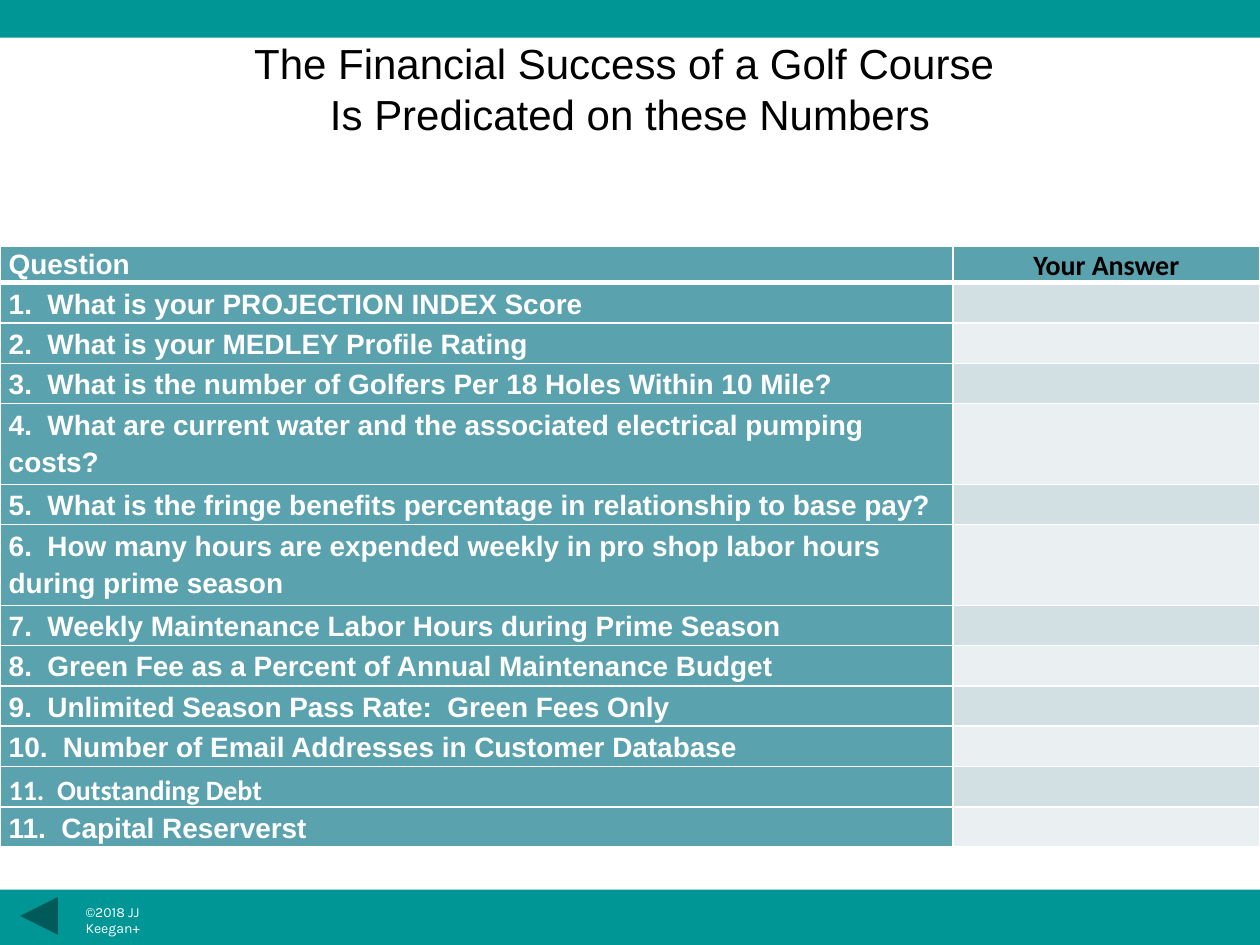
from dataclasses import dataclass

from lxml import etree
from pptx import Presentation
from pptx import util as u
from pptx.dml.color import RGBColor
from pptx.enum import shapes, text
from pptx.oxml import ns

Pt = u.Pt


@dataclass(frozen=True)
class Theme:
    teal: str = "009696"
    label_fill: str = "5AA2AE"
    bands: tuple = ("D2E0E3", "EAF0F2")
    white: str = "FFFFFF"
    black: str = "000000"
    font: str = "Arial"
    alt_font: str = "Calibri"
    footer_font: str = "Karla"
    title_size: int = 24
    table_size: int = 16
    footer_size: int = 8


THEME = Theme()
WIDTH, HEIGHT = 720, 540
HEADER_HEIGHT, LINE_HEIGHT = 20.5, 23
QUESTIONS = [
    "1.  What is your PROJECTION INDEX Score",
    "2.  What is your MEDLEY Profile Rating",
    "3.  What is the number of Golfers Per 18 Holes Within 10 Mile?",
    "4.  What are current water and the associated electrical pumping costs?",
    "5.  What is the fringe benefits percentage in relationship to base pay?",
    "6.  How many hours are expended weekly in pro shop labor hours during prime season",
    "7.  Weekly Maintenance Labor Hours during Prime Season",
    "8.  Green Fee as a Percent of Annual Maintenance Budget",
    "9.  Unlimited Season Pass Rate:  Green Fees Only",
    "10.  Number of Email Addresses in Customer Database",
    "11.  Outstanding Debt",
    "11.  Capital Reserverst",
]
TWO_LINE_ROWS = (4, 6)
ALT_FONT_ROW = 11


def add_block(slide, kind, left, top, width, height):
    """Add a borderless teal shape."""
    block = slide.shapes.add_shape(kind, Pt(left), Pt(top), Pt(width), Pt(height))
    block.shadow.inherit = False
    block.fill.solid()
    block.fill.fore_color.rgb = RGBColor.from_string(THEME.teal)
    block.line.fill.background()


def format_spans(para, font, size, color, bold=False):
    for span in para.runs:
        span.font.name = font
        span.font.size = Pt(size)
        span.font.bold = bold
        span.font.color.rgb = RGBColor.from_string(color)


def add_text(slide, left, top, width, height, content, font, size, color, align, wrap):
    box = slide.shapes.add_textbox(Pt(left), Pt(top), Pt(width), Pt(height))
    frame = box.text_frame
    frame.word_wrap = wrap
    frame.text = content
    for para in frame.paragraphs:
        para.alignment = align
        format_spans(para, font, size, color)


def set_borders(cell, header):
    properties = cell._tc.get_or_add_tcPr()
    for side in "LRTB":
        weight = 3 if header and side == "B" or not header and side == "T" and header is None else 1
        line = etree.SubElement(properties, ns.qn(f"a:ln{side}"), w=str(Pt(weight)))
        fill = etree.SubElement(line, ns.qn("a:solidFill"))
        etree.SubElement(fill, ns.qn("a:srgbClr"), val=THEME.white)


def style_cell(cell, fill, header=False):
    cell.margin_left = cell.margin_right = Pt(5)
    cell.margin_top = cell.margin_bottom = 0
    set_borders(cell, header)
    cell.fill.solid()
    cell.fill.fore_color.rgb = RGBColor.from_string(fill)


def write_cell(cell, content, font, color, spacing, align=text.PP_ALIGN.LEFT):
    cell.text_frame.text = content
    para = cell.text_frame.paragraphs[0]
    para.alignment = align
    para.line_spacing = spacing
    format_spans(para, font, THEME.table_size, color, bold=True)


def add_question_table(slide):
    heights = [HEADER_HEIGHT] + [
        LINE_HEIGHT * (2 if number in TWO_LINE_ROWS else 1)
        for number in range(1, len(QUESTIONS) + 1)
    ]
    frame = slide.shapes.add_table(
        len(heights), 2, 0, Pt(141), Pt(WIDTH), Pt(sum(heights)))
    table = frame.table
    table.horz_banding = False
    for column, width in zip(table.columns, (544.5, 175.5)):
        column.width = Pt(width)
    for row, height in zip(table.rows, heights):
        row.height = Pt(height)

    for cell in table.rows[0].cells:
        style_cell(cell, THEME.label_fill, header=True)
    write_cell(table.cell(0, 0), "Question", THEME.font, THEME.white, 1.07)
    write_cell(table.cell(0, 1), "Your Answer", THEME.alt_font, THEME.black, 1.07,
               text.PP_ALIGN.CENTER)
    for number, question in enumerate(QUESTIONS, start=1):
        label, answer = table.rows[number].cells
        style_cell(label, THEME.label_fill)
        style_cell(answer, THEME.bands[(number - 1) % 2])
        font = THEME.alt_font if number == ALT_FONT_ROW else THEME.font
        write_cell(label, question, font, THEME.white, 1.2)


def main():
    deck = Presentation()
    deck.slide_width, deck.slide_height = Pt(WIDTH), Pt(HEIGHT)
    slide = deck.slides.add_slide(deck.slide_layouts[6])
    kinds = shapes.MSO_SHAPE
    add_block(slide, kinds.RECTANGLE, 0, 0, WIDTH, 21.6)
    add_block(slide, kinds.RECTANGLE, 0, 508.4, WIDTH, 31.6)
    add_block(slide, kinds.ACTION_BUTTON_BACK_OR_PREVIOUS, 4.3, 509, 36, 28.8)
    add_text(slide, 41.8, 512.6, 77, 17.3, "©2018 JJ Keegan+", THEME.footer_font,
             THEME.footer_size, THEME.white, text.PP_ALIGN.LEFT, wrap=True)
    add_question_table(slide)
    add_text(slide, 133.2, 18, 453.6, 65.5,
             "The Financial Success of a Golf Course \nIs Predicated on these Numbers",
             THEME.font, THEME.title_size, THEME.black, text.PP_ALIGN.CENTER, wrap=False)
    deck.save("out.pptx")


if __name__ == "__main__":
    main()
